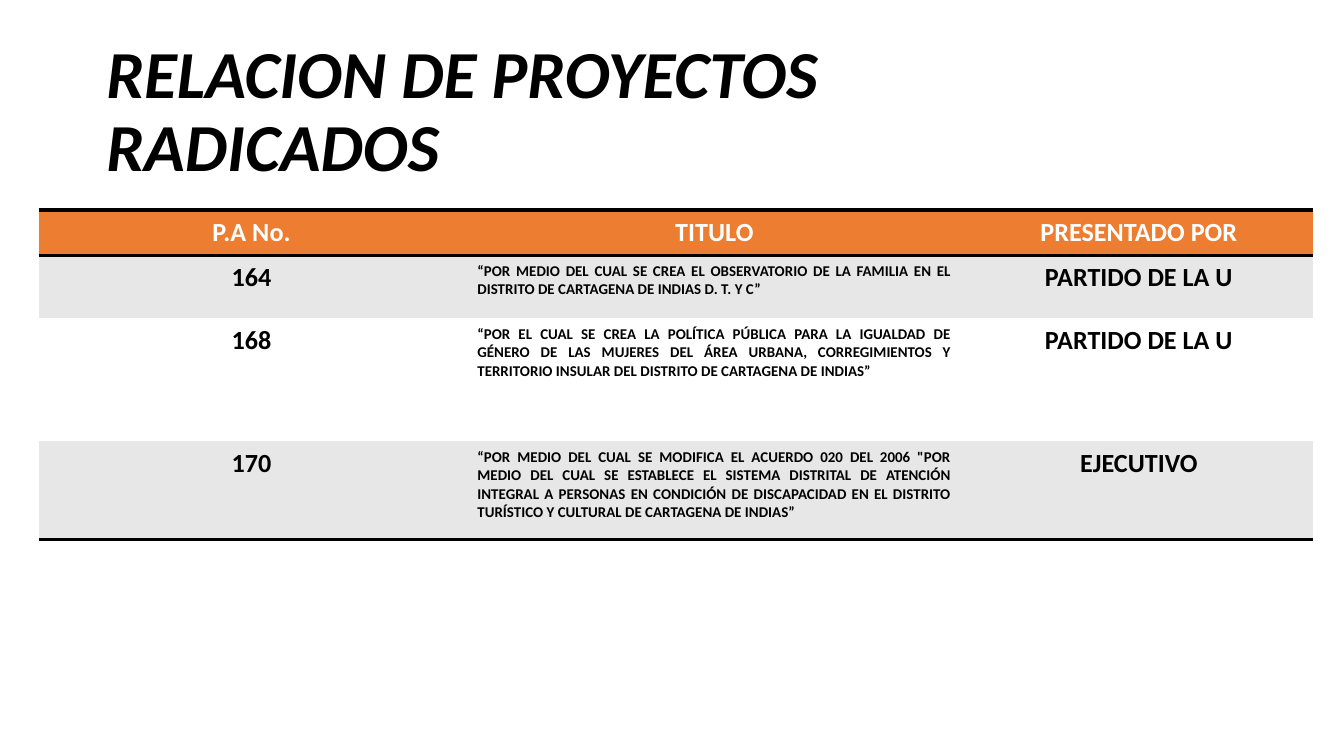
"""Build the slide that lists the filed projects."""
from dataclasses import dataclass

from lxml.etree import SubElement
from pptx import Presentation
from pptx.dml.color import RGBColor
from pptx.enum.text import MSO_ANCHOR, PP_ALIGN
from pptx.oxml.ns import qn
from pptx.util import Emu, Pt

EMU_PER_PX = 9144000 / 1344
COLUMN_WIDTHS = [425, 501, 348]
ROW_HEIGHTS = [41, 63, 123, 98]
RULED_BOUNDARIES = {0, 1, 4}
TITLE_COLUMN = 1
ROWS = [
    ("P.A No.", "TITULO", "PRESENTADO POR"),
    ("164",
     "“POR MEDIO DEL CUAL SE CREA EL OBSERVATORIO DE LA FAMILIA EN EL "
     "DISTRITO DE CARTAGENA DE INDIAS D. T. Y C”",
     "PARTIDO DE LA U"),
    ("168",
     "“POR EL CUAL SE CREA LA POLÍTICA PÚBLICA PARA LA IGUALDAD DE GÉNERO "
     "DE LAS MUJERES DEL ÁREA URBANA, CORREGIMIENTOS Y TERRITORIO INSULAR "
     "DEL DISTRITO DE CARTAGENA DE INDIAS” ",
     "PARTIDO DE LA U"),
    ("170",
     "“POR MEDIO DEL CUAL SE MODIFICA EL ACUERDO 020 DEL 2006 \"POR MEDIO "
     "DEL CUAL SE ESTABLECE EL SISTEMA DISTRITAL DE ATENCIÓN INTEGRAL A "
     "PERSONAS EN CONDICIÓN DE DISCAPACIDAD EN EL DISTRITO TURÍSTICO Y "
     "CULTURAL DE CARTAGENA DE INDIAS”",
     "EJECUTIVO"),
]


@dataclass(frozen=True)
class Theme:
    font: str = "Calibri"
    ink: str = "000000"
    paper: str = "FFFFFF"
    header: str = "ED7D31"
    band: str = "E7E7E7"
    title_size: int = 36
    label_size: int = 14
    detail_size: int = 8
    rule_width: int = 2


THEME = Theme()


def px(length):
    return Emu(round(length * EMU_PER_PX))


def format_paragraph(paragraph, size, color, alignment, italic=False):
    paragraph.alignment = alignment
    for run in paragraph.runs:
        font = run.font
        font.name = THEME.font
        font.size = Pt(size)
        font.bold = True
        font.italic = italic
        font.color.rgb = RGBColor.from_string(color)


def add_title(slide, text):
    title = slide.shapes.title
    title.left, title.top, title.width, title.height = map(px, (93, 40, 1158, 146))
    text_frame = title.text_frame
    text_frame.text = text
    text_frame.word_wrap = True
    text_frame.vertical_anchor = MSO_ANCHOR.MIDDLE
    paragraph = text_frame.paragraphs[0]
    paragraph.line_spacing = 0.9
    format_paragraph(paragraph, THEME.title_size, THEME.ink, PP_ALIGN.LEFT, italic=True)


def set_borders(cell, row):
    ruled = {"a:lnT": row in RULED_BOUNDARIES, "a:lnB": row + 1 in RULED_BOUNDARIES}
    properties = cell._tc.get_or_add_tcPr()
    for tag in ("a:lnL", "a:lnR", "a:lnT", "a:lnB"):
        line = SubElement(properties, qn(tag))
        if ruled.get(tag):
            line.set("w", str(Pt(THEME.rule_width)))
            fill = SubElement(line, qn("a:solidFill"))
            SubElement(fill, qn("a:srgbClr")).set("val", THEME.ink)
        else:
            SubElement(line, qn("a:noFill"))


def fill_cell(cell, row, column, text):
    is_header = row == 0
    is_detail = column == TITLE_COLUMN and not is_header
    background = THEME.header if is_header else THEME.band if row % 2 else THEME.paper
    cell.text_frame.text = text
    format_paragraph(
        cell.text_frame.paragraphs[0],
        THEME.detail_size if is_detail else THEME.label_size,
        THEME.paper if is_header else THEME.ink,
        PP_ALIGN.JUSTIFY if is_detail else PP_ALIGN.CENTER,
    )
    set_borders(cell, row)
    cell.fill.solid()
    cell.fill.fore_color.rgb = RGBColor.from_string(background)


def add_project_table(slide):
    table = slide.shapes.add_table(
        len(ROWS), len(COLUMN_WIDTHS), px(39), px(210),
        px(sum(COLUMN_WIDTHS)), px(sum(ROW_HEIGHTS)),
    ).table
    table.horz_banding = False
    for column, width in zip(table.columns, COLUMN_WIDTHS):
        column.width = px(width)
    for row, height in zip(table.rows, ROW_HEIGHTS):
        row.height = px(height)
    for row, texts in enumerate(ROWS):
        for column, text in enumerate(texts):
            fill_cell(table.cell(row, column), row, column, text)


def main():
    presentation = Presentation()
    presentation.slide_width = px(1344)
    presentation.slide_height = px(756)
    slide = presentation.slides.add_slide(presentation.slide_layouts[5])
    add_title(slide, "RELACION DE PROYECTOS \vRADICADOS")
    add_project_table(slide)
    presentation.save("out.pptx")


if __name__ == "__main__":
    main()
